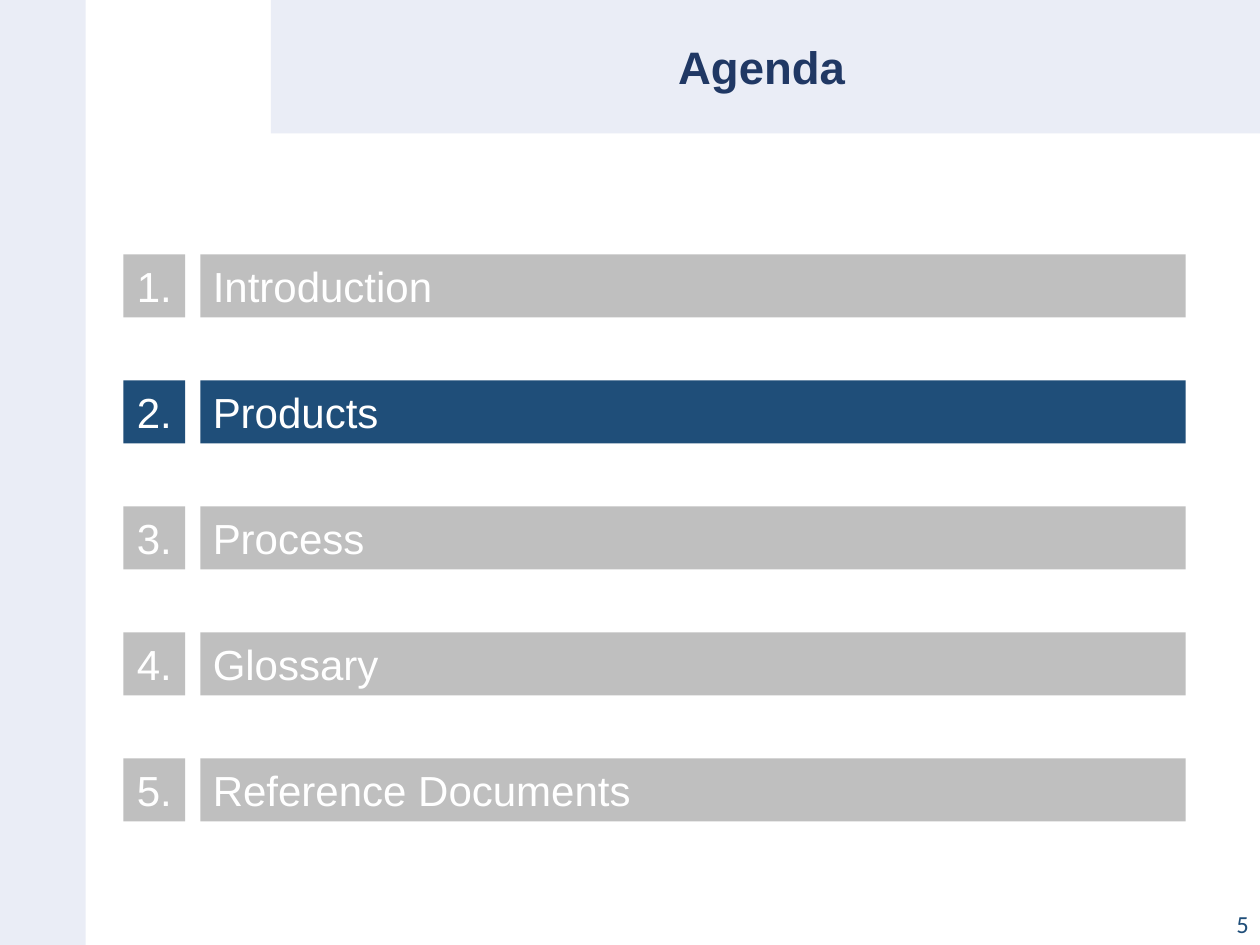
import pptx
import pptx.util
import pptx.dml.color
import pptx.enum.shapes
import pptx.enum.text

Inches = pptx.util.Inches
ALIGN = pptx.enum.text.PP_ALIGN
ANCHOR = pptx.enum.text.MSO_ANCHOR
HUES = {"pale": "EAEDF6", "navy": "203864", "blue": "1F4E79",
        "grey": "BFBFBF", "white": "FFFFFF"}

deck = pptx.Presentation()
deck.slide_width, deck.slide_height = Inches(10), Inches(7.5)
slide = deck.slides.add_slide(deck.slide_layouts[5])


def add_bar(left, top, width, height, hue):
    """Add a plain filled rectangle."""
    bar = slide.shapes.add_shape(
        pptx.enum.shapes.MSO_SHAPE.RECTANGLE,
        Inches(left), Inches(top), Inches(width), Inches(height))
    bar.shadow.inherit = False
    bar.fill.solid()
    bar.fill.fore_color.rgb = pptx.dml.color.RGBColor.from_string(HUES[hue])
    bar.line.fill.background()
    return bar


def set_text(shape, text, size, hue, align, face="Arial", anchor=ANCHOR.MIDDLE):
    """Write one styled paragraph into a shape."""
    frame = shape.text_frame
    frame.text = text
    frame.word_wrap = True
    frame.vertical_anchor = anchor
    para = frame.paragraphs[0]
    para.alignment = align
    para.font.name = face
    para.font.size = pptx.util.Pt(size)
    para.font.color.rgb = pptx.dml.color.RGBColor.from_string(HUES[hue])
    return para


# Side and top bands
add_bar(0, 0, 0.68, 7.5, "pale")
band = add_bar(2.15, 0, 7.85, 1.06, "pale")

# Title, placed in front of the band
title = slide.shapes.title
title.left, title.top = Inches(2.09), Inches(0.02)
title.width, title.height = Inches(7.91), Inches(1.06)
head = set_text(title, "Agenda", 26, "navy", ALIGN.CENTER)
head.font.bold = True
head.line_spacing = 0.9
band.element.addnext(title.element)

# Page number
page = slide.shapes.add_textbox(
    Inches(7.76), Inches(7.1), Inches(2.25), Inches(0.4))
set_text(page, "5", 14, "blue", ALIGN.RIGHT, "Calibri", ANCHOR.BOTTOM)

# Agenda rows, with the current one in blue
topics = ["Introduction", "Products", "Process", "Glossary",
          "Reference Documents"]
current = "Products"
first, pitch, height = 2.02, 1, 0.5
for row, topic in enumerate(topics):
    top = first + row * pitch
    hue = "blue" if topic == current else "grey"
    label = add_bar(1.59, top, 7.82, height, hue)
    set_text(label, topic, 24, "white", ALIGN.LEFT)
    number = add_bar(0.98, top, 0.49, height, hue)
    set_text(number, f"{row + 1}.", 24, "white", ALIGN.CENTER)

deck.save("out.pptx")
